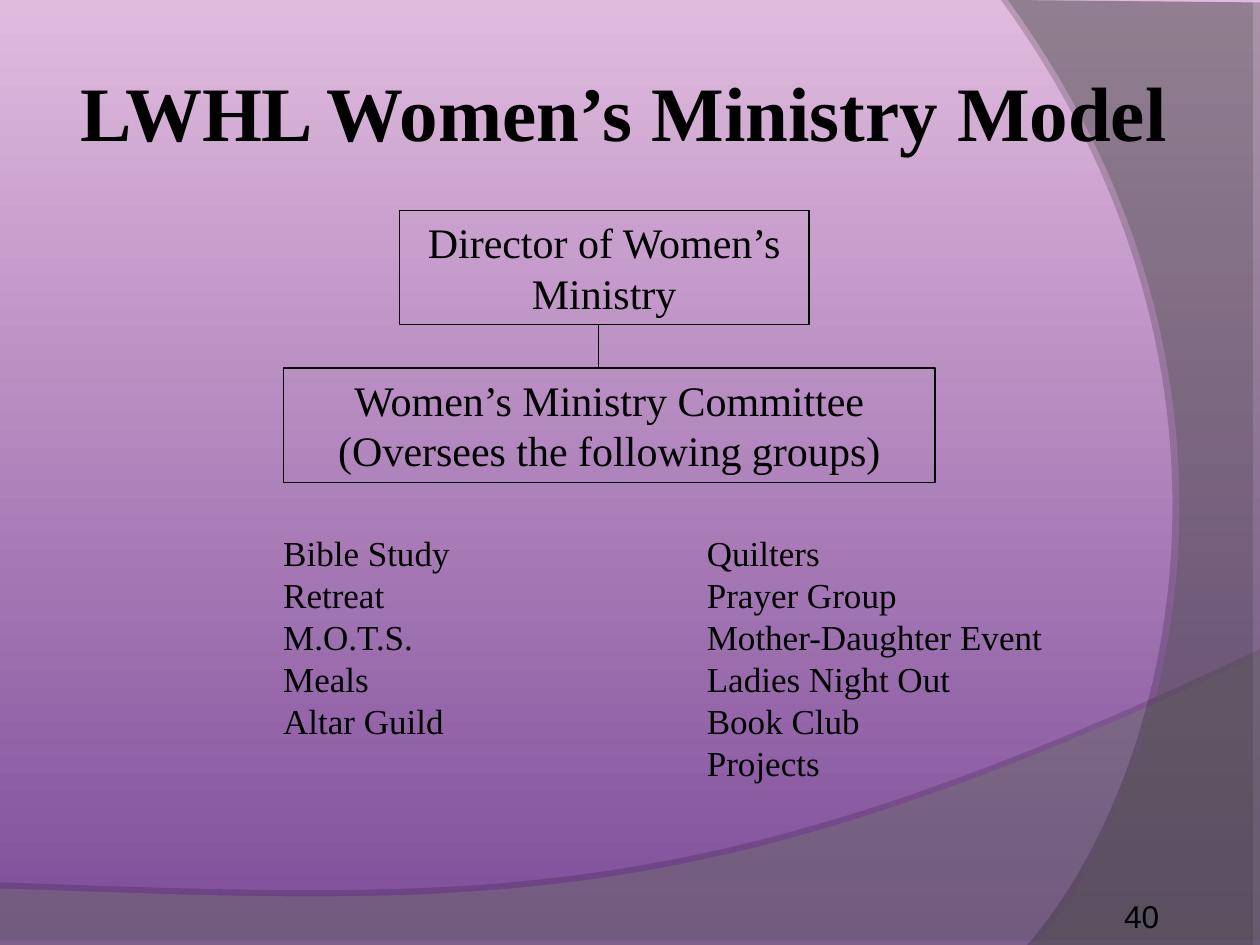
from dataclasses import dataclass

from lxml import etree
from pptx import Presentation
from pptx import util as u
from pptx.dml.color import RGBColor
from pptx.enum import shapes, text
from pptx.oxml.ns import qn

SERIF = "Times New Roman"
BLACK = "000000"
Point = tuple[float, float]


@dataclass
class Swoosh:
    """Outline in cm: straight corners, then a Bezier from the last corner."""
    corners: list[Point]
    curve: list[Point]
    color: str
    opacity: int
    shadow_opacity: int
    shadow_dist: float
    shadow_angle: int


@dataclass
class Label:
    """Text block; box and insets (left, other sides) in cm."""
    box: tuple[float, float, float, float]
    lines: list[str]
    size: int
    font: str = SERIF
    bold: bool = False
    framed: bool = False
    wrap: bool = True
    anchor: text.MSO_ANCHOR = text.MSO_ANCHOR.TOP
    insets: Point = (0.25, 0.13)


SWOOSHES = [
    Swoosh([(0, 17.91), (0, 19.08), (25.4, 19.08), (25.4, 13.21)],
           [(14.2, 18.52), (9.93, 18.26), (0, 17.91)],
           "7C7C7C", 45, 35, 3.5, 270),
    Swoosh([(25.4, 0.05), (25.4, 19.05), (20.85, 19.05)],
           [(23.75, 15.72), (25.86, 7.62), (20.32, 0)],
           "595959", 40, 45, 4, 180),
]

MIDDLE, BOTTOM = text.MSO_ANCHOR.MIDDLE, text.MSO_ANCHOR.BOTTOM
LABELS = [
    Label((0.43, 0.84, 23.7, 2.77), ["LWHL Women’s Ministry Model"], 44,
          bold=True, anchor=MIDDLE, insets=(1.2, 0.13)),
    Label((8.05, 4.24, 8.26, 2.31), ["Director of Women’s Ministry"], 24, framed=True),
    Label((5.72, 7.42, 13.13, 2.31),
          ["Women’s Ministry Committee", "(Oversees the following groups)"], 24, framed=True),
    Label((5.46, 10.59, 8.4, 6.35),
          ["Bible Study", "Retreat", "M.O.T.S.", "Meals", "Altar Guild"], 20, wrap=False),
    Label((14, 10.59, 8.4, 6.35),
          ["Quilters", "Prayer Group", "Mother-Daughter Event", "Ladies Night Out",
           "Book Club", "Projects"], 20, wrap=False),
    Label((22.66, 17.83, 2.11, 1.02), ["40"], 18, "Arial", anchor=BOTTOM, insets=(0, 0)),
]


def rgb(color: str) -> RGBColor:
    return RGBColor.from_string(color)


def set_alpha(clr, percent: int) -> None:
    etree.SubElement(clr, qn("a:alpha")).set("val", str(percent * 1000))


def bezier(points: list[Point], steps: int = 60) -> list[Point]:
    """Points along a cubic Bezier, without its start."""
    result = []
    for i in range(1, steps + 1):
        t = i / steps
        weights = ((1 - t) ** 3, 3 * t * (1 - t) ** 2, 3 * t * t * (1 - t), t ** 3)
        result.append(tuple(sum(w * p[k] for w, p in zip(weights, points)) for k in (0, 1)))
    return result


def draw_swoosh(s, item: Swoosh) -> None:
    outline = item.corners + bezier([item.corners[-1], *item.curve])
    points = [(u.Cm(x), u.Cm(y)) for x, y in outline]
    builder = s.shapes.build_freeform(*points[0])
    builder.add_line_segments(points[1:])
    sp = builder.convert_to_shape()
    sp.fill.solid()
    sp.fill.fore_color.rgb = rgb(item.color)
    sp.line.fill.background()
    sp.shadow.inherit = False
    props = sp.element.spPr
    set_alpha(props.find(qn("a:solidFill"))[0], item.opacity)
    shadow = etree.SubElement(props.find(qn("a:effectLst")), qn("a:outerShdw"), {
        "blurRad": "0", "dist": str(u.Pt(item.shadow_dist)),
        "dir": str(item.shadow_angle * 60000), "algn": "ctr", "rotWithShape": "0"})
    clr = etree.SubElement(shadow, qn("a:srgbClr"), {"val": BLACK})
    set_alpha(clr, item.shadow_opacity)


def draw_label(s, item: Label) -> None:
    box = [u.Cm(v) for v in item.box]
    if item.framed:
        sp = s.shapes.add_shape(shapes.MSO_SHAPE.RECTANGLE, *box)
        sp.shadow.inherit = False
        sp.fill.background()
        sp.line.color.rgb = rgb(BLACK)
        sp.line.width = u.Pt(0.75)
    else:
        sp = s.shapes.add_textbox(*box)
    tf = sp.text_frame
    tf.word_wrap = item.wrap
    tf.vertical_anchor = item.anchor
    side, other = item.insets
    tf.margin_left = u.Cm(side)
    tf.margin_right = u.Cm(min(side, 0.13) if not item.framed else side)
    tf.margin_top = tf.margin_bottom = u.Cm(other)
    for i, line in enumerate(item.lines):
        p = tf.add_paragraph() if i else tf.paragraphs[0]
        p.alignment = text.PP_ALIGN.CENTER if item.framed else text.PP_ALIGN.LEFT
        r = p.add_run()
        r.text = line
        r.font.name = item.font
        r.font.size = u.Pt(item.size)
        r.font.bold = item.bold
        r.font.color.rgb = rgb(BLACK)


def draw_link(s, x: float, top: float, bottom: float) -> None:
    line = s.shapes.add_connector(shapes.MSO_CONNECTOR.STRAIGHT,
                                  u.Cm(x), u.Cm(top), u.Cm(x), u.Cm(bottom))
    line.line.color.rgb = rgb(BLACK)
    line.line.width = u.Pt(0.75)
    etree.SubElement(line.element.spPr, qn("a:effectLst"))


def main() -> None:
    prs = Presentation()
    prs.slide_width, prs.slide_height = u.Cm(25.4), u.Cm(19.05)
    s = prs.slides.add_slide(prs.slide_layouts[6])

    # Background, light at the top
    fill = s.background.fill
    fill.gradient()
    fill.gradient_angle = 270
    for stop, color in zip(fill.gradient_stops, ("E1BBDE", "7D4C99")):
        stop.color.rgb = rgb(color)

    # Decorative swooshes
    for swoosh in SWOOSHES:
        draw_swoosh(s, swoosh)

    # Title, organisation boxes, group lists and page number
    for label in LABELS:
        draw_label(s, label)

    # Director to committee
    draw_link(s, 12.07, 6.55, 7.42)

    prs.save("out.pptx")


if __name__ == "__main__":
    main()
